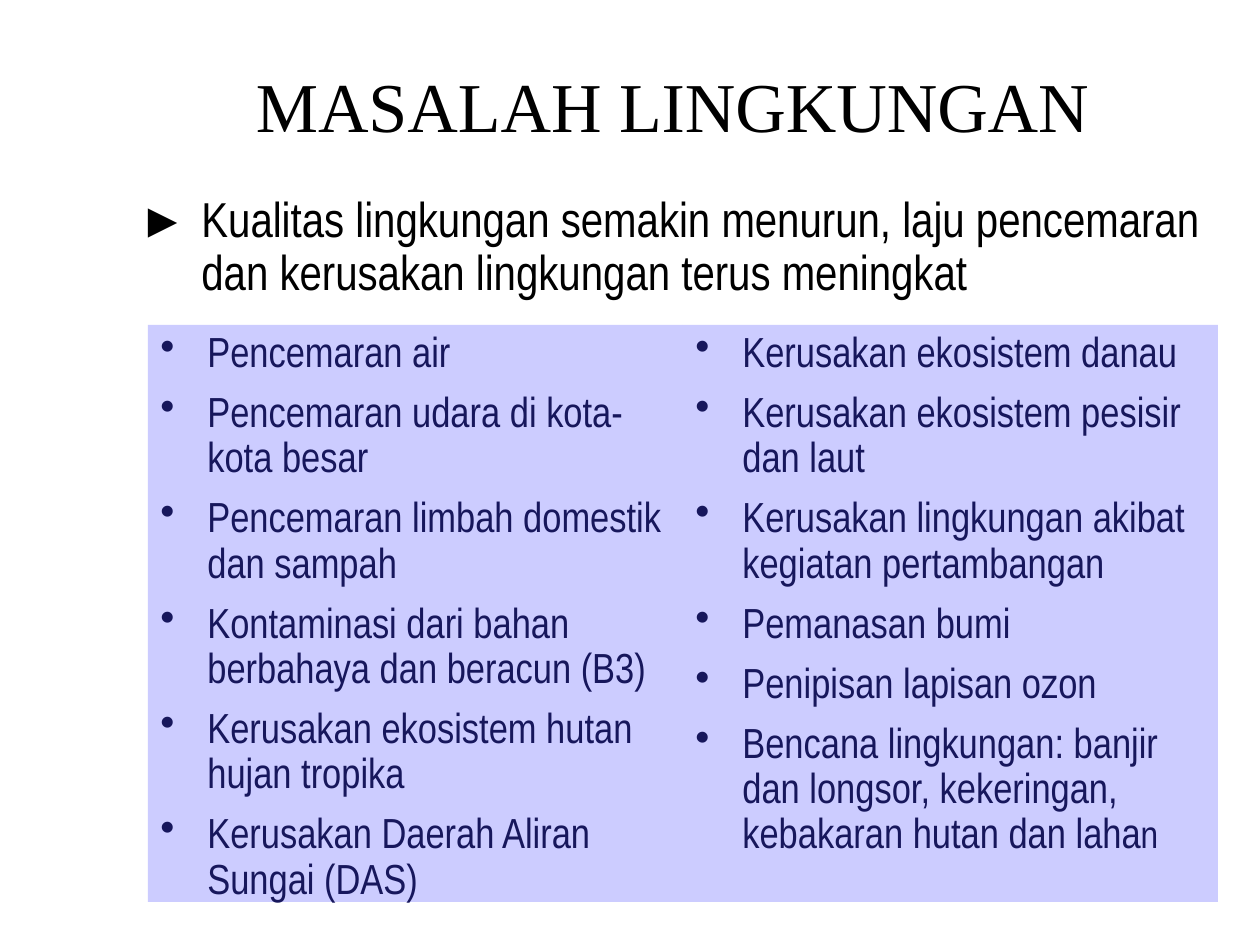
from dataclasses import dataclass

from lxml import etree
from pptx import Presentation
from pptx.dml.color import RGBColor
from pptx.enum.shapes import MSO_SHAPE
from pptx.enum.text import MSO_ANCHOR, PP_ALIGN
from pptx.oxml.ns import qn
from pptx.util import Emu, Pt

RECT = MSO_SHAPE.RECTANGLE
TOP, MIDDLE = MSO_ANCHOR.TOP, MSO_ANCHOR.MIDDLE
LEFT, CENTER = PP_ALIGN.LEFT, PP_ALIGN.CENTER

BLACK = RGBColor(0x00, 0x00, 0x00)
NAVY = RGBColor(0x17, 0x17, 0x5C)
LILAC = RGBColor(0xCC, 0xCC, 0xFF)

SERIF, NARROW = "Times New Roman", "Arial Narrow"
PX_PER_INCH = 126
PANEL_LEFT, PANEL_TOP, PANEL_WIDTH, PANEL_HEIGHT = 148, 325, 535, 577


def px(length: int) -> Emu:
    return Emu(round(length * 914400 / PX_PER_INCH))


@dataclass(frozen=True)
class Box:
    left: int
    top: int
    width: int
    height: int

    def emu(self) -> list[Emu]:
        return [px(n) for n in (self.left, self.top, self.width, self.height)]


@dataclass(frozen=True)
class Style:
    face: str
    size: int
    color: RGBColor
    align: PP_ALIGN = LEFT
    anchor: MSO_ANCHOR = TOP
    indent: int = 0
    spacing: float = 1.0
    before: float = 0
    bullet: str = ""


@dataclass(frozen=True)
class Panel:
    items: list[str]
    tail: str = ""


TITLE = Style(SERIF, 40, BLACK, align=CENTER, anchor=MIDDLE)
LEAD = Style(NARROW, 28, BLACK, indent=63, spacing=0.9)
ITEM = Style(NARROW, 24, NAVY, indent=47, spacing=0.9, before=8.4, bullet="•")
TAIL_SIZE = Pt(22)

PANELS = [
    Panel([
        "Pencemaran air",
        "Pencemaran udara di kota-kota besar",
        "Pencemaran limbah domestik dan sampah",
        "Kontaminasi dari bahan berbahaya dan beracun (B3)",
        "Kerusakan ekosistem hutan hujan tropika",
        "Kerusakan Daerah Aliran Sungai (DAS)",
    ]),
    Panel([
        "Kerusakan ekosistem danau",
        "Kerusakan ekosistem pesisir dan laut",
        "Kerusakan lingkungan akibat kegiatan pertambangan",
        "Pemanasan bumi",
        "Penipisan lapisan ozon",
        "Bencana lingkungan: banjir dan longsor, kekeringan, kebakaran hutan dan laha",
    ], tail="n"),
]


def write(frame, lines: list[str], style: Style) -> None:
    """Fill a text frame with one styled paragraph per line."""
    frame.word_wrap = True
    frame.vertical_anchor = style.anchor
    for i, line in enumerate(lines):
        para = frame.paragraphs[0] if i == 0 else frame.add_paragraph()
        para.text = line
        para.alignment = style.align
        para.line_spacing = style.spacing
        if i and style.before:
            para.space_before = Pt(style.before)
        props = para._p.get_or_add_pPr()
        if style.indent:
            props.set("marL", str(px(style.indent)))
            props.set("indent", str(-px(style.indent)))
        if style.bullet:
            etree.SubElement(props, qn("a:buChar")).set("char", style.bullet)
        para.font.name = style.face
        para.font.size = Pt(style.size)
        para.font.color.rgb = style.color


def add_text(slide, box: Box, text: str, style: Style) -> None:
    write(slide.shapes.add_textbox(*box.emu()).text_frame, [text], style)


def add_panel(slide, box: Box, panel: Panel) -> None:
    shape = slide.shapes.add_shape(RECT, *box.emu())
    shape.shadow.inherit = False
    shape.fill.solid()
    shape.fill.fore_color.rgb = LILAC
    shape.line.fill.background()
    write(shape.text_frame, panel.items, ITEM)
    if panel.tail:
        run = shape.text_frame.paragraphs[-1].add_run()
        run.text = panel.tail
        run.font.size = TAIL_SIZE


def main() -> None:
    deck = Presentation()
    deck.slide_width, deck.slide_height = px(1260), px(945)
    slide = deck.slides.add_slide(deck.slide_layouts[6])
    add_text(slide, Box(116, 63, 1113, 84), "MASALAH LINGKUNGAN", TITLE)
    add_text(
        slide,
        Box(126, 189, 1103, 126),
        "►\tKualitas lingkungan semakin menurun, laju pencemaran "
        "dan kerusakan lingkungan terus meningkat",
        LEAD,
    )
    for col, panel in enumerate(PANELS):
        left = PANEL_LEFT + col * PANEL_WIDTH
        add_panel(slide, Box(left, PANEL_TOP, PANEL_WIDTH, PANEL_HEIGHT), panel)
    deck.save("out.pptx")


if __name__ == "__main__":
    main()
